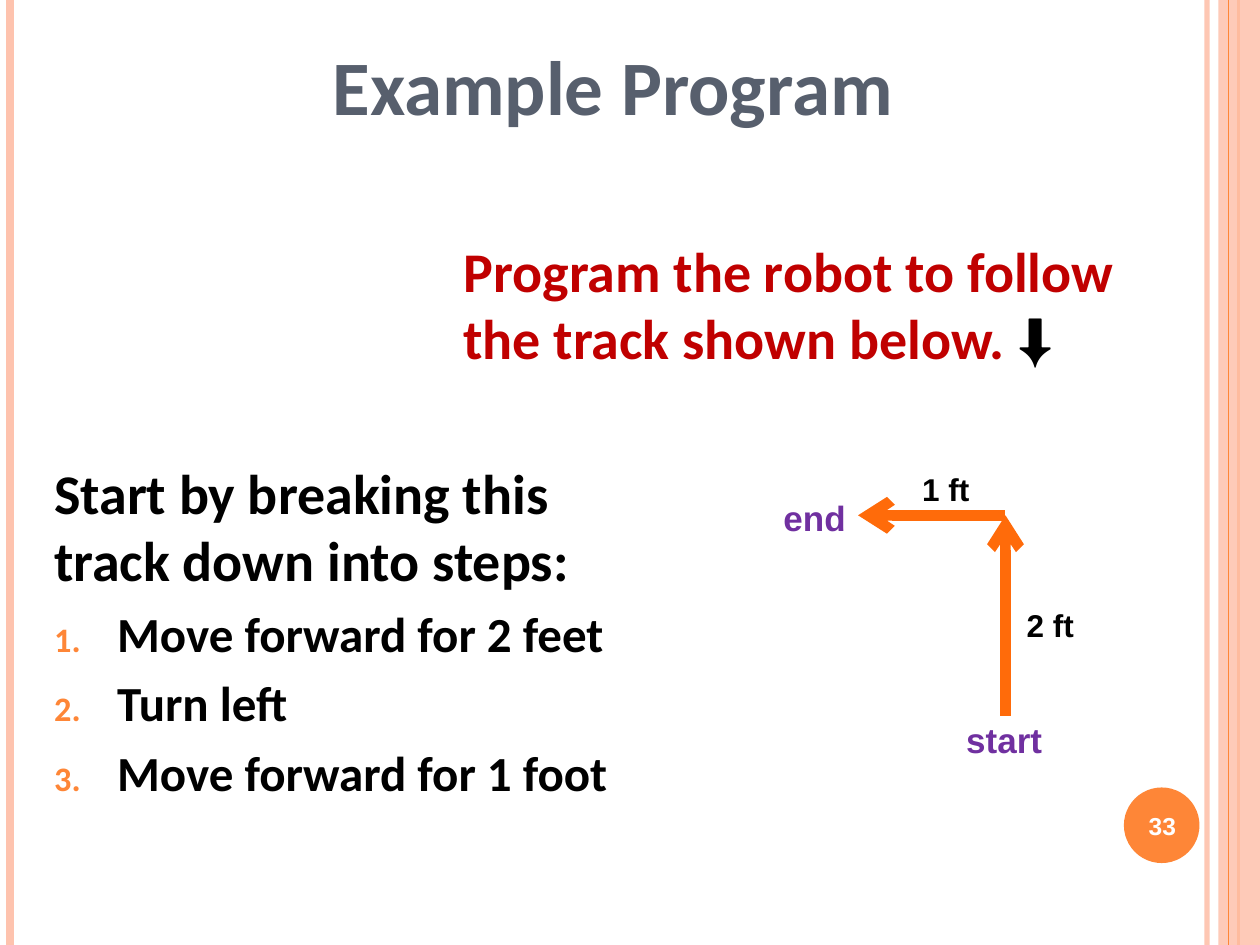
from lxml.etree import SubElement
from pptx import Presentation
from pptx.dml.color import RGBColor
from pptx.enum.shapes import MSO_CONNECTOR, MSO_SHAPE
from pptx.enum.text import MSO_ANCHOR, MSO_AUTO_SIZE, PP_ALIGN
from pptx.oxml.ns import qn
from pptx.util import Inches, Pt

ORANGE = "FE8637"
PINK = "FEC3AE"
TRACK = "FF6B0A"
PURPLE = "7030A0"
BLACK = "000000"
WHITE = "FFFFFF"


def set_color(color_format, color):
    color_format.rgb = RGBColor.from_string(color)


def set_opacity(fill, percent):
    """Make a solid fill, of a shape or a line, partly transparent."""
    color = fill._xPr.find(qn("a:solidFill"))[0]
    SubElement(color, qn("a:alpha"), val=str(percent * 1000))


def place(shape, left, top, width, height):
    shape.left, shape.top = Inches(left), Inches(top)
    shape.width, shape.height = Inches(width), Inches(height)


def add_run(paragraph, text, size, color, font="Calibri"):
    run = paragraph.add_run()
    run.text = text
    run.font.name = font
    run.font.size = Pt(size)
    run.font.bold = True
    set_color(run.font.color, color)


def add_line(shapes, start, end, color, width, opacity=100, arrow=False):
    points = [Inches(value) for value in (*start, *end)]
    line = shapes.add_connector(MSO_CONNECTOR.STRAIGHT, *points)
    line.line.width = Pt(width)
    line.line.fill.solid()
    set_color(line.line.color, color)
    if opacity < 100:
        set_opacity(line.line.fill, opacity)
    if arrow:
        SubElement(line.line._get_or_add_ln(), qn("a:tailEnd"), type="arrow")
    SubElement(line._element.spPr, qn("a:effectLst"))


def add_filled_shape(shapes, kind, box, color, opacity=100):
    shape = shapes.add_shape(kind, *[Inches(value) for value in box])
    shape.shadow.inherit = False
    shape.fill.solid()
    set_color(shape.fill.fore_color, color)
    if opacity < 100:
        set_opacity(shape.fill, opacity)
    shape.line.fill.background()


def add_text_box(shapes, box, wrap=True):
    """Add an empty text box and return its text frame."""
    frame = shapes.add_textbox(*[Inches(value) for value in box]).text_frame
    frame.word_wrap = wrap
    return frame


def add_track_label(shapes, text, box, size, color):
    frame = add_text_box(shapes, box, wrap=False)
    frame.auto_size = MSO_AUTO_SIZE.SHAPE_TO_FIT_TEXT
    add_run(frame.paragraphs[0], text, size, color, "Arial")


def format_list_paragraph(paragraph, numbered):
    paragraph.space_before = Pt(6)
    properties = paragraph._p.get_or_add_pPr()
    indent = Inches(0.5) if numbered else 0
    properties.set("marL", str(indent))
    properties.set("indent", str(-indent))
    if numbered:
        bullet_color = SubElement(properties, qn("a:buClr"))
        SubElement(bullet_color, qn("a:srgbClr"), val=ORANGE)
        SubElement(properties, qn("a:buSzPct"), val="70000")
        SubElement(properties, qn("a:buFont"), typeface="+mj-lt")
        SubElement(properties, qn("a:buAutoNum"), type="arabicPeriod")
    else:
        SubElement(properties, qn("a:buNone"))


def add_side_stripes(shapes):
    def stripe(x, color, width, opacity=100):
        add_line(shapes, (x, 0), (x, 7.5), color, width, opacity)

    stripe(9.58, PINK, 3, 93)
    stripe(0.08, PINK, 4.5)
    stripe(9.83, ORANGE, 1.5)
    add_filled_shape(shapes, MSO_SHAPE.RECTANGLE, (9.67, 0, 0.33, 7.5), PINK, 87)
    stripe(9.75, ORANGE, 0.75)


def fill_title(title):
    place(title, 0.17, 0.3, 9.39, 0.79)
    frame = title.text_frame
    frame.auto_size = MSO_AUTO_SIZE.NONE
    frame.vertical_anchor = MSO_ANCHOR.BOTTOM
    paragraph = frame.paragraphs[0]
    paragraph.alignment = PP_ALIGN.CENTER
    add_run(paragraph, "Example Program", 44, "575F6D")


def fill_steps(body):
    place(body, 0.33, 3.59, 5.39, 3.07)
    frame = body.text_frame
    frame.auto_size = MSO_AUTO_SIZE.NONE
    intro = frame.paragraphs[0]
    format_list_paragraph(intro, numbered=False)
    add_run(intro, "Start by breaking this", 32, BLACK)
    intro.add_line_break()
    add_run(intro, "track down into steps:", 32, BLACK)
    for step in ("Move forward for 2 feet", "Turn left", "Move forward for 1 foot"):
        paragraph = frame.add_paragraph()
        format_list_paragraph(paragraph, numbered=True)
        add_run(paragraph, step, 28, BLACK)


def add_page_number(shapes):
    add_filled_shape(shapes, MSO_SHAPE.OVAL, (8.92, 6.25, 0.6, 0.6), ORANGE)
    frame = add_text_box(shapes, (8.89, 6.27, 0.67, 0.57))
    frame.vertical_anchor = MSO_ANCHOR.MIDDLE
    paragraph = frame.paragraphs[0]
    paragraph.alignment = PP_ALIGN.CENTER
    add_run(paragraph, "33", 14, WHITE, "Arial")


def add_track(shapes):
    track = shapes.add_group_shape().shapes
    start, corner, end = (7.98, 5.68), (7.98, 4.09), (6.81, 4.09)
    add_line(track, start, corner, TRACK, 6, arrow=True)
    add_line(track, corner, end, TRACK, 6, arrow=True)
    add_track_label(track, "1 ft", (7.22, 3.68, 0.58, 0.4), 18, BLACK)
    add_track_label(track, "2 ft", (8.05, 4.76, 0.58, 0.4), 18, BLACK)
    add_track_label(track, "start", (7.57, 5.65, 0.81, 0.44), 20, PURPLE)
    add_track_label(track, "end", (6.12, 3.89, 0.7, 0.44), 20, PURPLE)


def add_task(shapes):
    paragraph = add_text_box(shapes, (3.58, 1.83, 5.39, 1.36)).paragraphs[0]
    paragraph.space_before = Pt(6)
    add_run(paragraph, "Program the robot to follow the track shown below. ", 32, "C00000")
    add_run(paragraph, "⬇", 32, BLACK)


def main():
    presentation = Presentation()
    presentation.slide_width = Inches(10)
    presentation.slide_height = Inches(7.5)
    slide = presentation.slides.add_slide(presentation.slide_layouts[1])
    slide.background.fill.solid()
    set_color(slide.background.fill.fore_color, WHITE)
    add_side_stripes(slide.shapes)
    fill_title(slide.shapes.title)
    fill_steps(slide.placeholders[1])
    add_page_number(slide.shapes)
    add_track(slide.shapes)
    add_task(slide.shapes)
    presentation.save("out.pptx")


if __name__ == "__main__":
    main()
